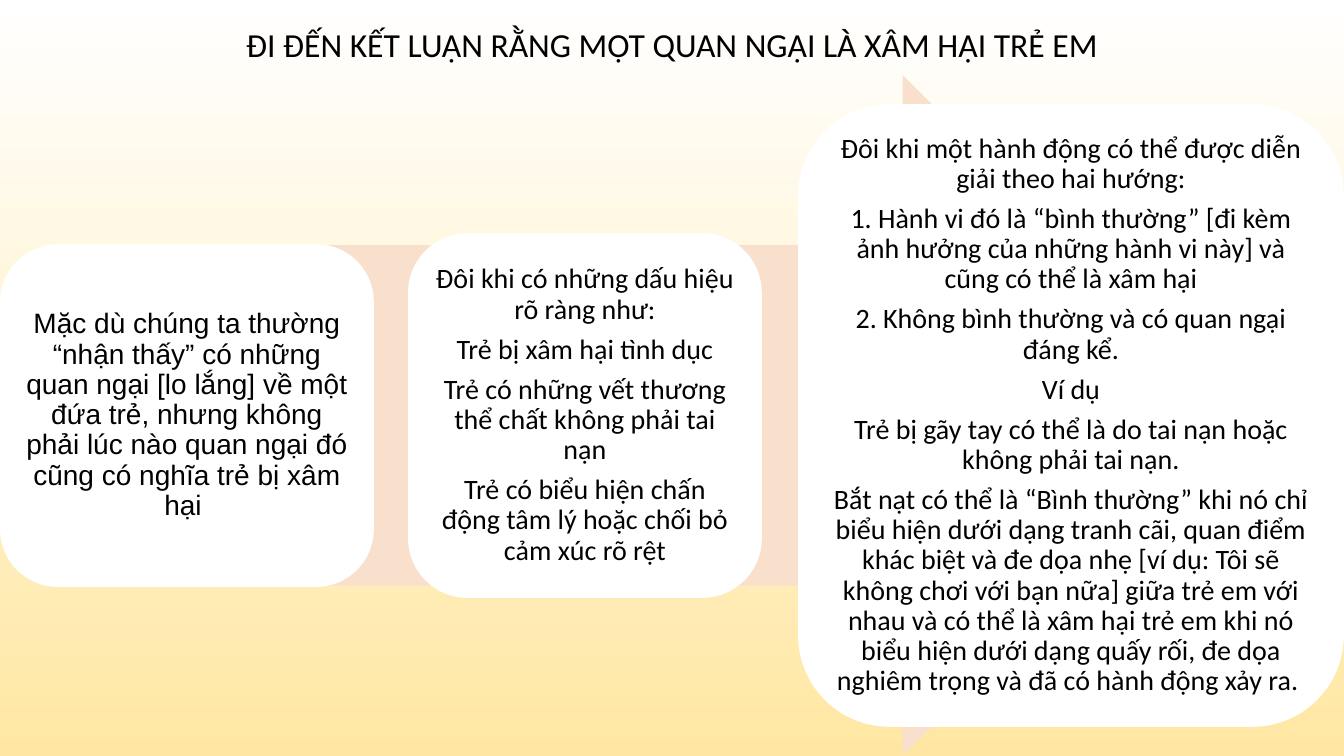
from pptx import Presentation
from pptx.dml.color import RGBColor
from pptx.enum.shapes import MSO_SHAPE
from pptx.enum.text import MSO_ANCHOR, PP_ALIGN
from pptx.util import Pt

# Content
HEADING = "ĐI ĐẾN KẾT LUẬN RẰNG MỘT QUAN NGẠI LÀ XÂM HẠI TRẺ EM"
STEPS = [
    {"box": (1, 245, 372, 341), "font": "Arial", "lines": [
        "Mặc dù chúng ta thường “nhận thấy” có những quan ngại [lo lắng] về một đứa trẻ, "
        "nhưng không phải lúc nào quan ngại đó cũng có nghĩa trẻ bị xâm hại ",
    ]},
    {"box": (409, 234, 352, 363), "font": "Calibri", "lines": [
        "Đôi khi có những dấu hiệu rõ ràng như:",
        "Trẻ bị xâm hại tình dục",
        "Trẻ có những vết thương thể chất không phải tai nạn",
        "Trẻ có biểu hiện chấn động tâm lý hoặc chối bỏ cảm xúc rõ rệt",
    ]},
    {"box": (799, 105, 544, 621), "font": "Calibri", "lines": [
        "Đôi khi một hành động có thể được diễn giải theo hai hướng:",
        "1. Hành vi đó là “bình thường” [đi kèm ảnh hưởng của những hành vi này] "
        "và cũng có thể là xâm hại",
        "2. Không bình thường và có quan ngại đáng kể.",
        "Ví dụ",
        "Trẻ bị gãy tay có thể là do tai nạn hoặc không phải tai nạn.",
        "Bắt nạt có thể là “Bình thường” khi nó chỉ biểu hiện dưới dạng tranh cãi, "
        "quan điểm khác biệt và đe dọa nhẹ [ví dụ: Tôi sẽ không chơi với bạn nữa] "
        "giữa trẻ em với nhau và có thể là xâm hại trẻ em khi nó biểu hiện dưới dạng "
        "quấy rối, đe dọa nghiêm trọng và đã có hành động xảy ra. ",
    ]},
]

# Layout in px and formats
SLIDE_W, SLIDE_H = 1344, 756
HEADING_BOX = (0, 19, 1344, 55)
ARROW_BOX = (101, 75, 1142, 681)
INSET = 8
COLORS = {"top": "FFFFFF", "bottom": "FFE7A3", "arrow": "F9E0CD",
          "card": "FFFFFF", "text": "000000"}
PARAGRAPH = {"alignment": PP_ALIGN.CENTER, "line_spacing": 0.9}


def px(length):
    return round(length * 12192000 / SLIDE_W)


def color(name):
    return RGBColor.from_string(COLORS[name])


def apply(target, formats):
    for key, value in formats.items():
        setattr(target, key, value)


def write(frame, lines, font, size, gap=0):
    apply(frame, {"word_wrap": True, "vertical_anchor": MSO_ANCHOR.MIDDLE})
    frame.text = "\n".join(lines)
    for paragraph in frame.paragraphs:
        apply(paragraph, {**PARAGRAPH, "space_before": Pt(0), "space_after": Pt(gap)})
        for run in paragraph.runs:
            apply(run.font, {"name": font, "size": Pt(size)})
            run.font.color.rgb = color("text")


def add_block(slide, preset, box, fill):
    block = slide.shapes.add_shape(preset, *map(px, box))
    block.shadow.inherit = False
    block.fill.solid()
    block.fill.fore_color.rgb = color(fill)
    return block


def main():
    prs = Presentation()
    apply(prs, {"slide_width": px(SLIDE_W), "slide_height": px(SLIDE_H)})
    slide = prs.slides.add_slide(prs.slide_layouts[5])

    # Background, white at the top
    backdrop = slide.background.fill
    backdrop.gradient()
    backdrop.gradient_angle = 270
    for stop, name in zip(backdrop.gradient_stops, ("top", "bottom")):
        stop.color.rgb = color(name)

    # Heading
    heading = slide.shapes.title
    apply(heading, dict(zip(("left", "top", "width", "height"), map(px, HEADING_BOX))))
    write(heading.text_frame, [HEADING], "Calibri", 24)

    # Arrow behind the steps
    arrow = add_block(slide, MSO_SHAPE.RIGHT_ARROW, ARROW_BOX, "arrow")
    arrow.line.fill.background()

    # Step cards
    for step in STEPS:
        card = add_block(slide, MSO_SHAPE.ROUNDED_RECTANGLE, step["box"], "card")
        card.line.color.rgb = color("card")
        card.line.width = Pt(1.25)
        for side in ("left", "top", "right", "bottom"):
            setattr(card.text_frame, f"margin_{side}", px(INSET))
        write(card.text_frame, step["lines"], step["font"], 20, gap=7)

    prs.save("out.pptx")


if __name__ == "__main__":
    main()
